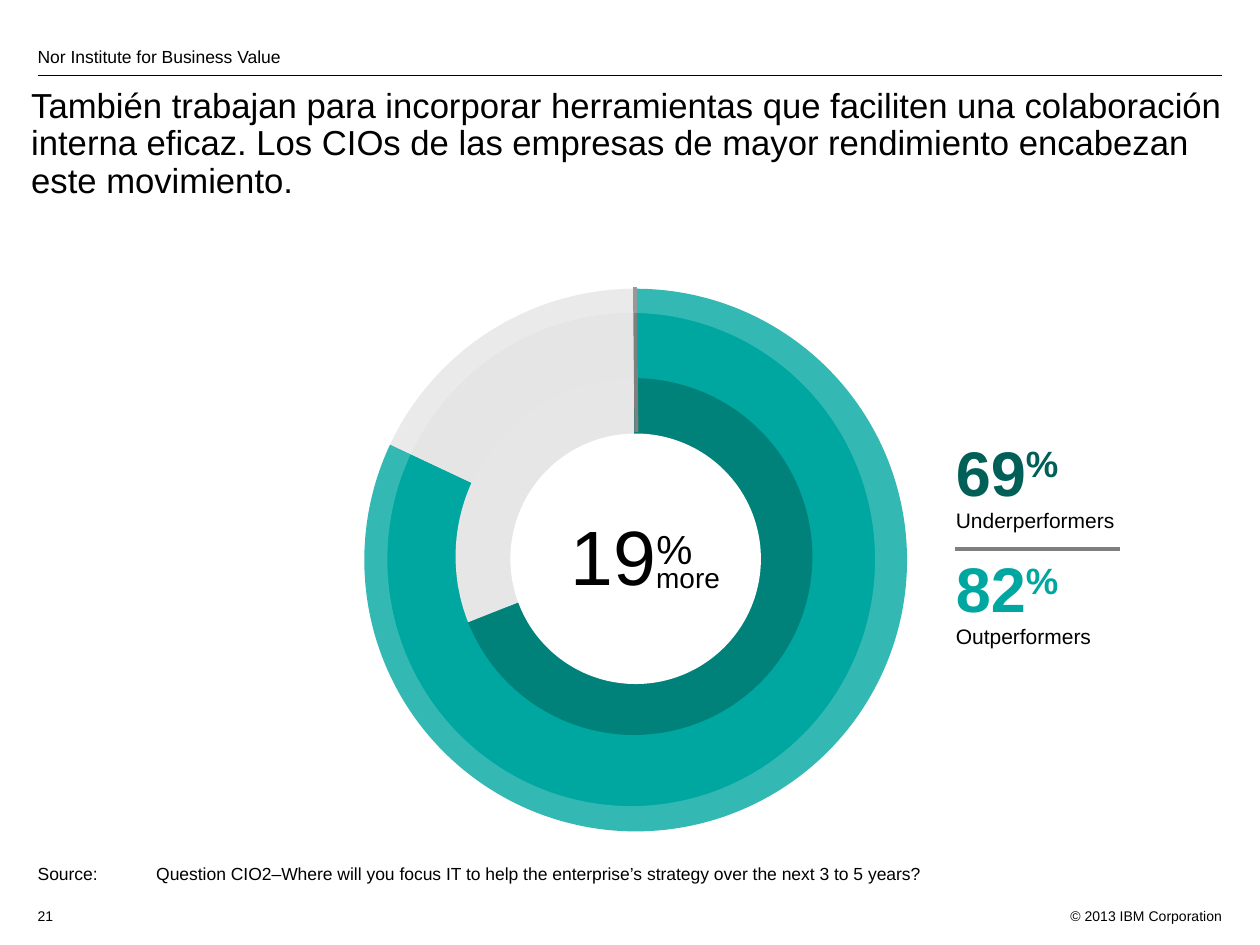
from lxml.etree import SubElement
from pptx import Presentation
from pptx.chart.data import CategoryChartData
from pptx.dml.color import RGBColor
from pptx.enum.chart import XL_CHART_TYPE as ChartType
from pptx.enum.shapes import MSO_CONNECTOR as Connector, MSO_SHAPE as Shape
from pptx.enum.text import MSO_ANCHOR as Anchor, PP_ALIGN as Align
from pptx.oxml.ns import qn
from pptx.util import Cm, Pt

BLACK = RGBColor(0x00, 0x00, 0x00)
WHITE = RGBColor(0xFF, 0xFF, 0xFF)
GREY = RGBColor(0x7F, 0x7F, 0x7F)
DARK_TEAL = RGBColor(0x00, 0x60, 0x57)
MID_TEAL = RGBColor(0x00, 0x82, 0x7B)
TEAL = RGBColor(0x00, 0xA7, 0xA0)
PALE = RGBColor(0xE5, 0xE5, 0xE5)
PALE_INNER = RGBColor(0xE6, 0xE6, 0xE6)

FONT = "Arial"
TITLE = ("También trabajan para incorporar herramientas que faciliten una colaboración "
         "interna eficaz. Los CIOs de las empresas de mayor rendimiento encabezan este movimiento.")
HEADER = "Nor Institute for Business Value"
SOURCE = ("Source:\tQuestion CIO2–Where will you focus IT to help the enterprise’s "
          "strategy over the next 3 to 5 years?")
PAGE = "21"
COPYRIGHT = "© 2013 IBM Corporation"
GROUPS = [("69", "Underperformers", DARK_TEAL), ("82", "Outperformers", TEAL)]
RINGS = [
    ((4.19, 5.82, 16.26, 11.73), 82, (TEAL, PALE)),
    ((7.11, 7.62, 10.69, 7.72), 69, (MID_TEAL, PALE_INNER)),
]
CATEGORIES = [str(number) for number in range(1, 10)]
PLOT_LAYOUT = [("layoutTarget", "inner"), ("xMode", "edge"), ("yMode", "edge"),
               ("x", "0.194"), ("y", "0"), ("w", "0.673"), ("h", "0.933")]

deck = Presentation()
deck.slide_width, deck.slide_height = Cm(25.4), Cm(19.05)
slide = deck.slides.add_slide(deck.slide_layouts[6])


def add_frame(box, anchor=Anchor.TOP, margin=0.13):
    frame = slide.shapes.add_textbox(*map(Cm, box)).text_frame
    frame.word_wrap = True
    frame.vertical_anchor = anchor
    frame.margin_top = frame.margin_bottom = Cm(margin)
    return frame


def add_run(paragraph, text, size, color=BLACK, bold=False, raised=False):
    run = paragraph.add_run()
    run.text = text
    font = run.font
    font.name, font.size, font.bold = FONT, Pt(size), bold
    font.color.rgb = color
    if raised:
        font._element.set("baseline", "30000")


def add_text(box, text, size, align=Align.LEFT, spacing=1.0, **frame_options):
    paragraph = add_frame(box, **frame_options).paragraphs[0]
    paragraph.alignment, paragraph.line_spacing = align, spacing
    add_run(paragraph, text, size)
    return paragraph


def add_rule(start, end, color, width):
    rule = slide.shapes.add_connector(Connector.STRAIGHT, *map(Cm, start + end))
    rule.line.color.rgb, rule.line.width = color, Pt(width)
    SubElement(rule._element.spPr, qn("a:effectLst"))


def add_white_shape(kind, box):
    shape = slide.shapes.add_shape(kind, *map(Cm, box))
    shape.shadow.inherit = False
    shape.fill.solid()
    shape.fill.fore_color.rgb = WHITE
    shape.line.fill.background()
    return shape


def add_ring(box, share, colors):
    data = CategoryChartData()
    data.categories = CATEGORIES
    data.add_series("Series 1", [share, 100 - share] + [None] * (len(CATEGORIES) - 2))
    chart = slide.shapes.add_chart(ChartType.DOUGHNUT, *map(Cm, box), data).chart
    chart.has_legend = chart.has_title = False
    chart.font.name, chart.font.size = FONT, Pt(18)
    chart.font.color.rgb = BLACK
    plot = chart.plots[0]
    plot.vary_by_categories = True
    for index, color in enumerate(colors):
        sector = plot.series[0].points[index].format
        sector.fill.solid()
        sector.fill.fore_color.rgb = color
        sector.line.fill.background()
    area = chart._chartSpace.chart.plotArea
    for old_layout in area.findall(qn("c:layout")):
        area.remove(old_layout)
    layout = SubElement(area, qn("c:layout"))
    area.insert(0, layout)
    manual = SubElement(layout, qn("c:manualLayout"))
    for tag, value in PLOT_LAYOUT:
        SubElement(manual, qn(f"c:{tag}")).set("val", value)


add_text((21.08, 18.16, 3.81, 0.51), COPYRIGHT, 8, Align.RIGHT)
add_text((0.51, 0.84, 21.97, 0.51), HEADER, 10, anchor=Anchor.BOTTOM, margin=0)
add_rule((0.76, 1.52), (24.64, 1.52), BLACK, 0.75)
add_text((0.38, 1.65, 24.89, 2.06), TITLE, 19.8, spacing=0.9)
add_text((0.51, 18.16, 1.02, 0.51), PAGE, 8)
source = add_text((0.51, 17.27, 24, 0.69), SOURCE, 10)
source_format = source._p.get_or_add_pPr()
source_format.set("marL", str(Cm(1.12)))
source_format.set("indent", str(-Cm(1.12)))

legend = add_frame((19.02, 8.79, 4.19, 4.5))
for index, (value, label, color) in enumerate(GROUPS):
    figure = legend.add_paragraph() if index else legend.paragraphs[0]
    if index:
        figure.space_before = Pt(14.5)
    add_run(figure, value, 36, color, bold=True)
    add_run(figure, "%", 36, color, bold=True, raised=True)
    caption = legend.add_paragraph()
    add_run(caption, label, 12)
    figure.line_spacing = caption.line_spacing = 0.9
add_rule((19.25, 11.07), (22.58, 11.07), GREY, 2.25)

for ring in RINGS:
    add_ring(*ring)
add_rule((12.8, 5.79), (12.83, 8.71), GREY, 2.25)
add_white_shape(Shape.OVAL, (10.29, 8.74, 5.05, 5.05))

difference = add_frame((7.32, 10.34, 10.82, 1.98)).paragraphs[0]
difference.alignment, difference.line_spacing = Align.CENTER, 0.9
add_run(difference, "19", 44)
add_run(difference, "%", 40, raised=True)
add_text((12.98, 11.25, 2.01, 0.89), "more", 16, spacing=0.9)

halo = add_white_shape(Shape.DONUT, (6.58, 5.08, 12.29, 12.4))
halo.adjustments[0] = 0.1
halo_color = halo._element.spPr.find(qn("a:solidFill"))[0]
SubElement(halo_color, qn("a:alpha")).set("val", "20000")

deck.save("out.pptx")
